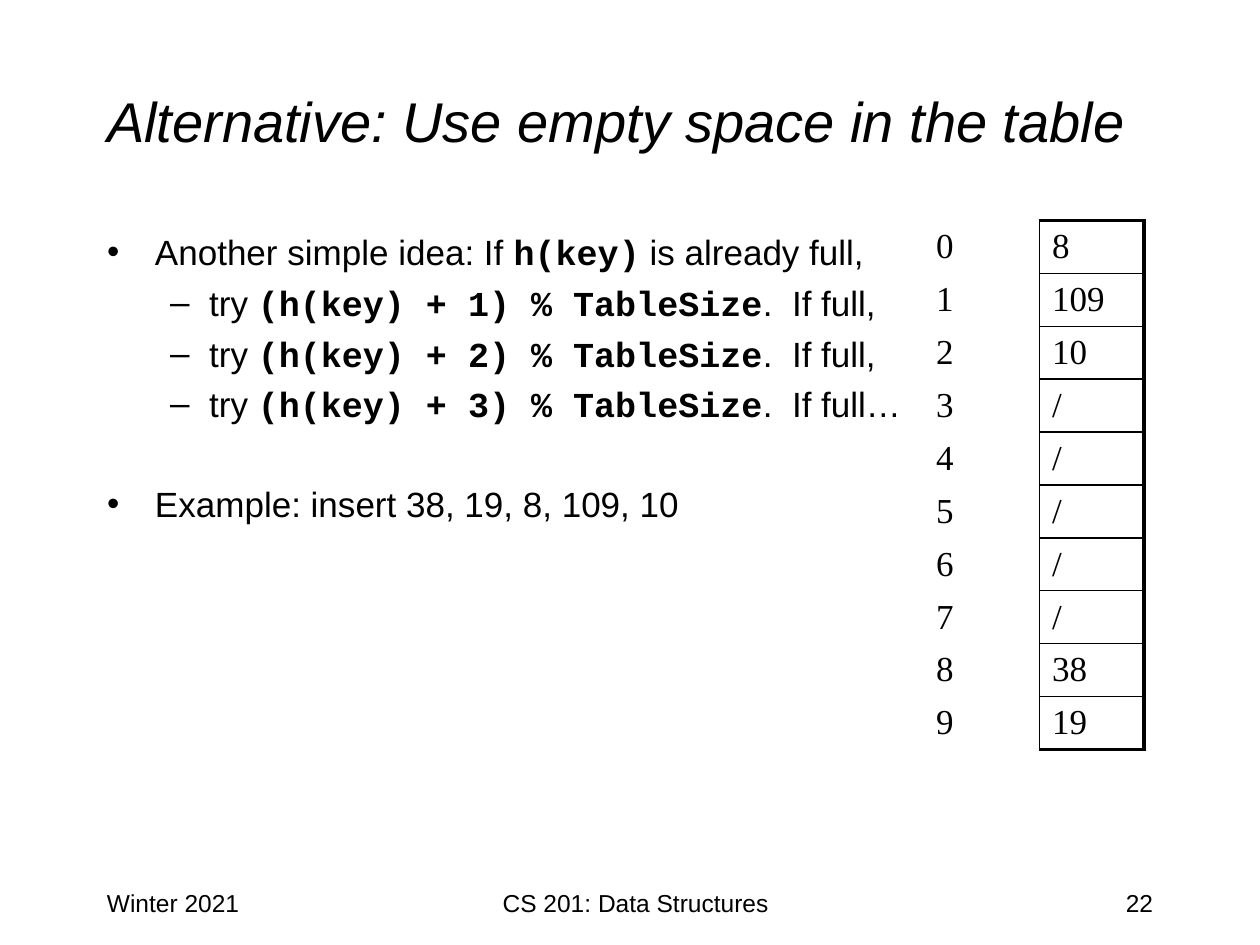
import pptx
import pptx.util
import pptx.dml.color
import pptx.enum.text
import pptx.oxml
import pptx.oxml.ns
from pptx.util import Inches, Pt

BLACK = pptx.dml.color.RGBColor(0, 0, 0)
ALIGN = pptx.enum.text.PP_ALIGN
MIDDLE = pptx.enum.text.MSO_ANCHOR.MIDDLE
NO_FIT = pptx.enum.text.MSO_AUTO_SIZE.NONE

# Content
TITLE = "Alternative: Use empty space in the table"
# (level, space before, runs); a run is (text, is code)
BODY = [
    (0, 0, [("Another simple idea: If ", False), ("h(key)", True),
            (" is already full,", False)]),
    *[(1, 5, [("try ", False), (f"(h(key) + {i}) % TableSize", True),
              (f".  If full{end}", False)])
      for i, end in ((1, ","), (2, ","), (3, "…"))],
    (0, 33, [("Example: insert 38, 19, 8, 109, 10", False)]),
]
SLOTS = ["8", "109", "10", "/", "/", "/", "/", "/", "38", "19"]
FOOTERS = [
    ("Winter 2021", 0.75, 2.08, ALIGN.LEFT),
    ("CS 201: Data Structures", 3.17, 3.75, ALIGN.CENTER),
    ("22", 7.17, 2.08, ALIGN.RIGHT),
]

# Formats
TITLE_FONT = dict(name="Arial", size=Pt(32), italic=True, bold=False)
TEXT_FONT = dict(name="Arial", size=Pt(20), bold=False)
CODE_FONT = dict(name="Courier New", size=Pt(20), bold=True)
CELL_FONT = dict(name="Times New Roman", size=Pt(20), bold=False)
FOOTER_FONT = dict(name="Arial", size=Pt(14))
LEVELS = [("•", 0.38, -0.38), ("–", 0.81, -0.31)]  # bullet, margin, indent
COLUMNS = (0.92, 0.83)
ROW_HEIGHT = 0.42
THIN, THICK = 1, 2.25


def add_run(p, text, font):
    r = p.add_run()
    r.text = text
    for name, value in font.items():
        setattr(r.font, name, value)
    r.font.color.rgb = BLACK


def place(sp, left, top, width, height):
    sp.left, sp.top = Inches(left), Inches(top)
    sp.width, sp.height = Inches(width), Inches(height)


def set_bullet(p, level):
    char, margin, indent = LEVELS[level]
    p.level = level
    pPr = p._p.get_or_add_pPr()
    pPr.set("marL", str(Inches(margin)))
    pPr.set("indent", str(Inches(indent)))
    bullet = pptx.oxml.parse_xml(
        f'<a:buChar {pptx.oxml.ns.nsdecls("a")} char="{char}"/>')
    pPr.append(bullet)


def set_borders(cell, widths):
    """Draw the sides in widths, a dict in the order L, R, T, B."""
    tcPr = cell._tc.get_or_add_tcPr()
    for i, (side, width) in enumerate(widths.items()):
        tcPr.insert(i, pptx.oxml.parse_xml(
            f'<a:ln{side} {pptx.oxml.ns.nsdecls("a")} w="{Pt(width)}">'
            f'<a:solidFill><a:srgbClr val="{BLACK}"/></a:solidFill></a:ln{side}>'))


prs = pptx.Presentation()
prs.slide_width, prs.slide_height = Inches(10), Inches(7.5)
s = prs.slides.add_slide(prs.slide_layouts[1])

# Title
title = s.shapes.title
place(title, 0.75, 0.33, 8.5, 1.25)
tf = title.text_frame
tf.auto_size, tf.vertical_anchor = NO_FIT, MIDDLE
tf.paragraphs[0].alignment = ALIGN.LEFT
add_run(tf.paragraphs[0], TITLE, TITLE_FONT)

# Probing steps
body = s.placeholders[1]
place(body, 0.75, 1.75, 8.5, 4.92)
tf = body.text_frame
tf.auto_size, tf.margin_top = NO_FIT, Inches(0.08)
for i, (level, before, runs) in enumerate(BODY):
    p = tf.add_paragraph() if i else tf.paragraphs[0]
    p.space_before = Pt(before)
    set_bullet(p, level)
    for text, is_code in runs:
        add_run(p, text, CODE_FONT if is_code else TEXT_FONT)

# Hash table: index column and boxed value column
frame = s.shapes.add_table(len(SLOTS), 2, Inches(7.33), Inches(1.75),
                           Inches(sum(COLUMNS)), Inches(ROW_HEIGHT * len(SLOTS)))
body._element.addprevious(frame._element)
table = frame.table
table.first_row = table.horz_banding = False
for column, width in zip(table.columns, COLUMNS):
    column.width = Inches(width)
last = len(SLOTS) - 1
for i, value in enumerate(SLOTS):
    table.rows[i].height = Inches(ROW_HEIGHT)
    box = dict(L=THIN, R=THICK, T=THIN if i else THICK,
               B=THIN if i < last else THICK)
    for j, (text, borders) in enumerate([(str(i), dict(R=THIN)), (value, box)]):
        cell = table.cell(i, j)
        cell.vertical_anchor = MIDDLE
        cell.fill.background()
        set_borders(cell, borders)
        add_run(cell.text_frame.paragraphs[0], text, CELL_FONT)

# Footer
for text, left, width, align in FOOTERS:
    sp = s.shapes.add_textbox(Inches(left), Inches(7), Inches(width), Inches(0.5))
    sp.text_frame.word_wrap = True
    p = sp.text_frame.paragraphs[0]
    p.alignment = align
    add_run(p, text, FOOTER_FONT)

prs.save("out.pptx")
